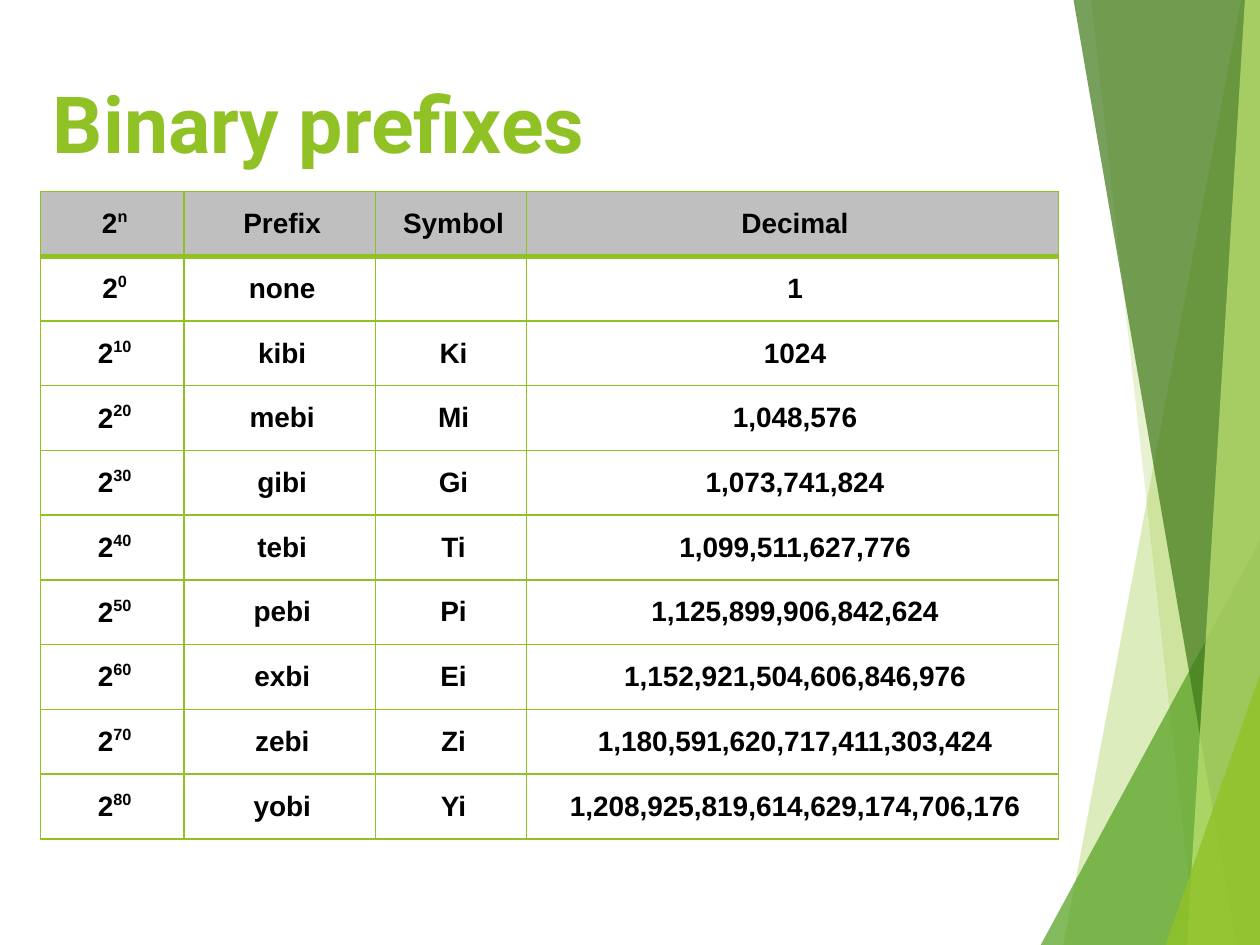
from dataclasses import dataclass

from lxml.etree import SubElement
from pptx import Presentation
from pptx.dml.color import RGBColor
from pptx.enum.text import MSO_ANCHOR as Anchor, MSO_AUTO_SIZE as AutoSize, PP_ALIGN as Align
from pptx.oxml import parse_xml
from pptx.oxml.ns import nsdecls, qn
from pptx.slide import Slide
from pptx.util import Inches, Pt

LIME = RGBColor(0x90, 0xC2, 0x26)
LEAF = RGBColor(0x54, 0xA0, 0x21)
FOREST = RGBColor(0x3F, 0x78, 0x19)
PALE = RGBColor(0xC0, 0xE4, 0x74)
SILVER = RGBColor(0xBF, 0xBF, 0xBF)
BLACK = RGBColor(0, 0, 0)

COLUMNS, ROWS = 100, 75
FACETS = [
    (LIME, 30, [(98.5, 0), (84.4, 75), (100, 75), (100, 0)]),
    (LIME, 20, [(86.6, 0), (94.9, 75), (100, 75), (100, 0)]),
    (LEAF, 72, [(82.6, 75), (100, 42.9), (100, 75)]),
    (FOREST, 70, [(85.2, 0), (98.1, 75), (100, 75), (100, 0)]),
    (PALE, 70, [(98.8, 0), (94.2, 75), (100, 75), (100, 0)]),
    (LIME, 80, [(92.5, 75), (100, 53.5), (100, 75)]),
]
HEADINGS = [("2", "n"), ("Prefix", ""), ("Symbol", ""), ("Decimal", "")]
PREFIXES = ["none", "kibi", "mebi", "gibi", "tebi", "pebi", "exbi", "zebi", "yobi"]


@dataclass
class PrefixSlide:
    """Holds the deck's style and current slide, measured on a 100 by 75 grid."""

    slide: Slide
    width: int
    height: int
    title_font: str = "Roboto"
    table_font: str = "Arial"

    def x(self, columns):
        """Convert grid columns to a length."""
        return round(self.width * columns / COLUMNS)

    def y(self, rows):
        """Convert grid rows to a length."""
        return round(self.height * rows / ROWS)

    def title(self, wording, left, top, columns, rows):
        """Place and format the title placeholder."""
        heading = self.slide.shapes.title
        heading.left, heading.top = self.x(left), self.y(top)
        heading.width, heading.height = self.x(columns), self.y(rows)
        frame = heading.text_frame
        frame.text = wording
        frame.auto_size = AutoSize.NONE
        frame.vertical_anchor = Anchor.MIDDLE
        line = frame.paragraphs[0]
        line.alignment = Align.LEFT
        self.style(line.font, self.title_font, 45, LIME)

    def facet(self, color, opacity, corners):
        """Draw one translucent polygon."""
        points = [(self.x(column), self.y(row)) for column, row in corners]
        builder = self.slide.shapes.build_freeform(*points[0])
        builder.add_line_segments(points[1:])
        facet = builder.convert_to_shape()
        facet.shadow.inherit = False
        facet.line.fill.background()
        facet.fill.solid()
        facet.fill.fore_color.rgb = color
        tint = facet.fill._xPr.find(qn("a:solidFill")).find(qn("a:srgbClr"))
        SubElement(tint, qn("a:alpha"), val=str(opacity * 1000))

    def table(self, records, left, top, widths, row_height):
        """Add a bordered table whose first record is the header."""
        table = self.slide.shapes.add_table(
            len(records), len(widths), self.x(left), self.y(top),
            self.x(sum(widths)), self.y(row_height * len(records))).table
        table.first_row = table.horz_banding = False
        for column, width in zip(table.columns, widths):
            column.width = self.x(width)
        for index, record in enumerate(records):
            table.rows[index].height = self.y(row_height)
            for position, (base, exponent) in enumerate(record):
                self.cell(table.cell(index, position), base, exponent, index)

    def cell(self, cell, base, exponent, row):
        """Fill one table cell with a base and an optional exponent."""
        cell.vertical_anchor = Anchor.MIDDLE
        cell.margin_left = cell.margin_right = Inches(0.06)
        cell.margin_top = cell.margin_bottom = Inches(0.06)
        if row == 0:
            cell.fill.solid()
            cell.fill.fore_color.rgb = SILVER
        else:
            cell.fill.background()
        self.borders(cell, L=1, R=1, T=3 if row == 1 else 1, B=3 if row == 0 else 1)
        line = cell.text_frame.paragraphs[0]
        line.alignment = Align.CENTER
        line._p.get_or_add_pPr().set("marL", str(Inches(0.04)))
        self.style(line.font, self.table_font, 16, BLACK)
        if base:
            line.add_run().text = base
        if exponent:
            power = line.add_run()
            power.text = exponent
            power.font._element.set("baseline", "40000")

    def borders(self, cell, **weights):
        """Give each named side of a cell a lime border."""
        properties = cell._tc.get_or_add_tcPr()
        for order, (side, weight) in enumerate(weights.items()):
            properties.insert(order, parse_xml(
                f'<a:ln{side} {nsdecls("a")} w="{Pt(weight)}"><a:solidFill>'
                f'<a:srgbClr val="{LIME}"/></a:solidFill></a:ln{side}>'))

    def style(self, font, name, size, color):
        """Apply a bold face, size and colour to a font."""
        font.name, font.size, font.bold = name, Pt(size), True
        font.color.rgb = color


def prefix_record(step, prefix):
    """Return the table row for the given power of 1024."""
    symbol = f"{prefix[0].upper()}i" if step else ""
    if prefix == "kibi":
        symbol = "Ki"
    decimal = f"{1024 ** step:,}" if step > 1 else str(1024 ** step)
    return [("2", str(10 * step)), (prefix, ""), (symbol, ""), (decimal, "")]


def main():
    """Build and save the slide."""
    deck = Presentation()
    deck.slide_width, deck.slide_height = Inches(10), Inches(7.5)
    slide = deck.slides.add_slide(deck.slide_layouts[5])
    page = PrefixSlide(slide, deck.slide_width, deck.slide_height)
    for facet in FACETS:
        page.facet(*facet)
    page.title("Binary prefixes", 3.2, 3.7, 79.4, 11.9)
    records = [HEADINGS] + [prefix_record(*item) for item in enumerate(PREFIXES)]
    page.table(records, 3.2, 15.2, [11.4, 15.2, 12, 42.2], 5.14)
    deck.save("out.pptx")


if __name__ == "__main__":
    main()
